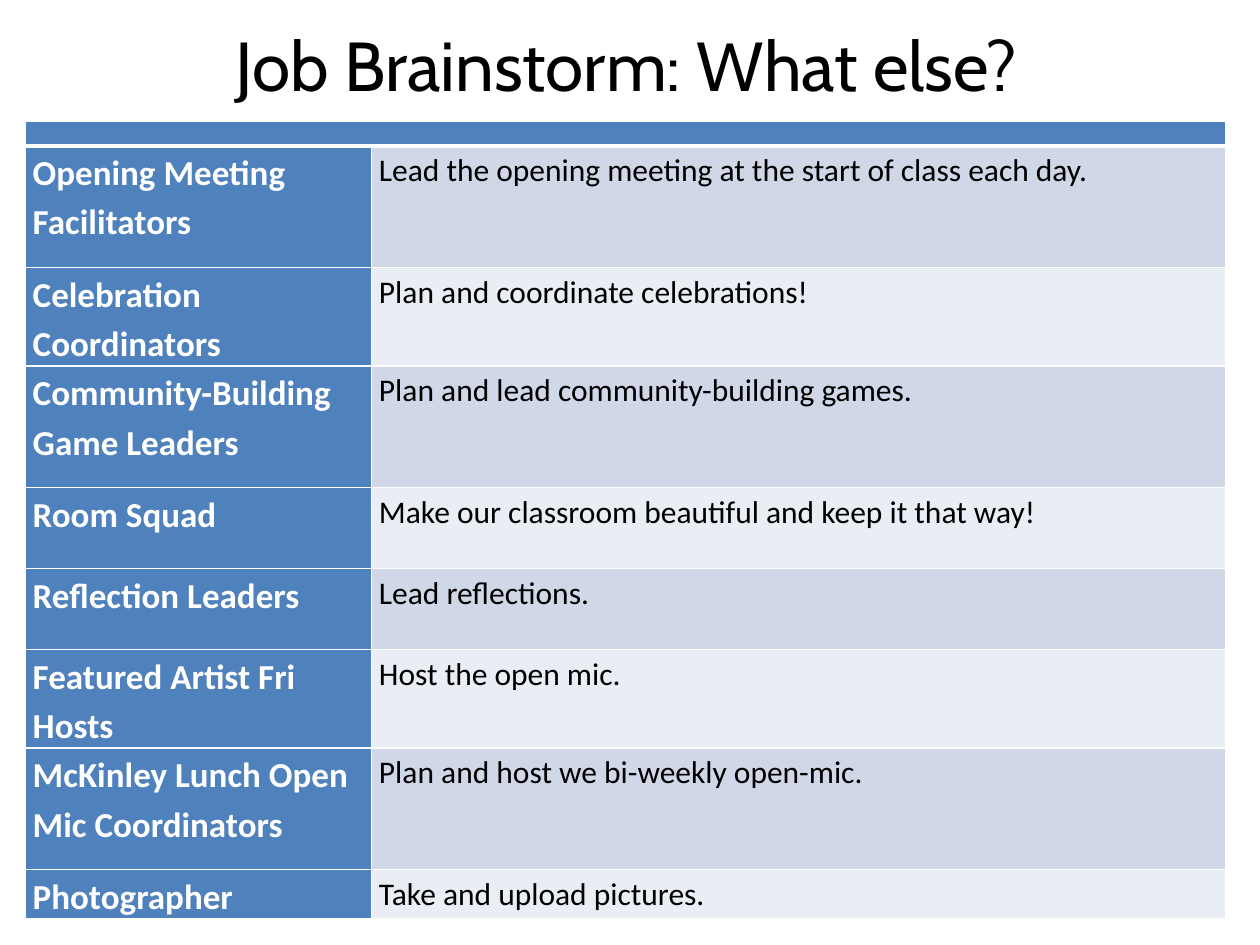
from pptx import Presentation
from pptx import util as u
from pptx.dml.color import RGBColor
from pptx.enum import text
from pptx.oxml.xmlchemy import OxmlElement

BLUE, WHITE, BLACK = "4F81BD", "FFFFFF", "000000"
BANDS = ("D0D8E8", "E9EDF4")
COLUMN_WIDTHS = (6.98, 17.22)
HEADER_HEIGHT = 0.5
JOBS = [
    ("Opening Meeting Facilitators", "Lead the opening meeting at the start of class each day.", 2.45),
    ("Celebration Coordinators", "Plan and coordinate celebrations!", 1.99),
    ("Community-Building Game Leaders", "Plan and lead community-building games.", 2.45),
    ("Room Squad", "Make our classroom beautiful and keep it that way!", 1.63),
    ("Reflection Leaders", "Lead reflections.", 1.63),
    ("Featured Artist Fri Hosts", "Host the open mic.", 1.99),
    ("McKinley Lunch Open Mic Coordinators", "Plan and host we bi-weekly open-mic.", 2.45),
    ("Photographer", "Take and upload pictures.", 0.98),
]


def color(value):
    return RGBColor.from_string(value)


def set_font(para, name, size, value, bold=False):
    para.font.name = name
    para.font.size = u.Pt(size)
    para.font.color.rgb = color(value)
    para.font.bold = bold


def set_borders(cell, bottom=1):
    properties = cell._tc.get_or_add_tcPr()
    sides = (("L", 1), ("R", 1), ("T", 1), ("B", bottom))
    for index, (side, width) in enumerate(sides):
        line = OxmlElement(f"a:ln{side}")
        line.set("w", str(u.Pt(width)))
        fill = OxmlElement("a:solidFill")
        shade = OxmlElement("a:srgbClr")
        shade.set("val", WHITE)
        fill.append(shade)
        line.append(fill)
        properties.insert(index, line)


def style_cell(cell, fill, bottom=1):
    cell.margin_left = cell.margin_right = u.Cm(0.15)
    cell.margin_top = cell.margin_bottom = 0
    cell.fill.solid()
    cell.fill.fore_color.rgb = color(fill)
    set_borders(cell, bottom)


def write_cell(cell, words, size, value, bold):
    cell.text = words
    para = cell.text_frame.paragraphs[0]
    para.line_spacing = 1.15
    set_font(para, "Calibri", size, value, bold)


def add_title(page, left, top, width, height):
    box = page.shapes.title
    box.left, box.top, box.width, box.height = map(u.Cm, (left, top, width, height))
    frame = box.text_frame
    frame.text = "Job Brainstorm: What else?"
    frame.vertical_anchor = text.MSO_ANCHOR.MIDDLE
    para = frame.paragraphs[0]
    para.alignment = text.PP_ALIGN.CENTER
    set_font(para, "Cabin", 39.6, BLACK)


def add_jobs(page, left, top):
    heights = [HEADER_HEIGHT] + [job[2] for job in JOBS]
    frame = page.shapes.add_table(
        len(heights), len(COLUMN_WIDTHS), u.Cm(left), u.Cm(top),
        u.Cm(sum(COLUMN_WIDTHS)), u.Cm(sum(heights)))
    table = frame.table
    table.first_row = table.horz_banding = False
    for column, width in zip(table.columns, COLUMN_WIDTHS):
        column.width = u.Cm(width)
    for row, height in zip(table.rows, heights):
        row.height = u.Cm(height)

    header = table.cell(0, 0)
    header.merge(table.cell(0, 1))
    for cell in table.rows[0].cells:
        style_cell(cell, BLUE, bottom=3)
        ending = OxmlElement("a:endParaRPr")
        ending.set("sz", "800")
        cell.text_frame.paragraphs[0]._p.append(ending)

    for index, (job, duty, _) in enumerate(JOBS):
        name_cell, duty_cell = table.rows[index + 1].cells
        style_cell(name_cell, BLUE)
        write_cell(name_cell, job, 20, WHITE, True)
        style_cell(duty_cell, BANDS[index % 2])
        write_cell(duty_cell, duty, 18, BLACK, False)


def main():
    deck = Presentation()
    deck.slide_width, deck.slide_height = u.Cm(25.4), u.Cm(19.05)
    page = deck.slides.add_slide(deck.slide_layouts[5])
    add_title(page, 3.45, 0, 18.36, 2.57)
    add_jobs(page, 0.51, 2.44)
    deck.save("out.pptx")


if __name__ == "__main__":
    main()
